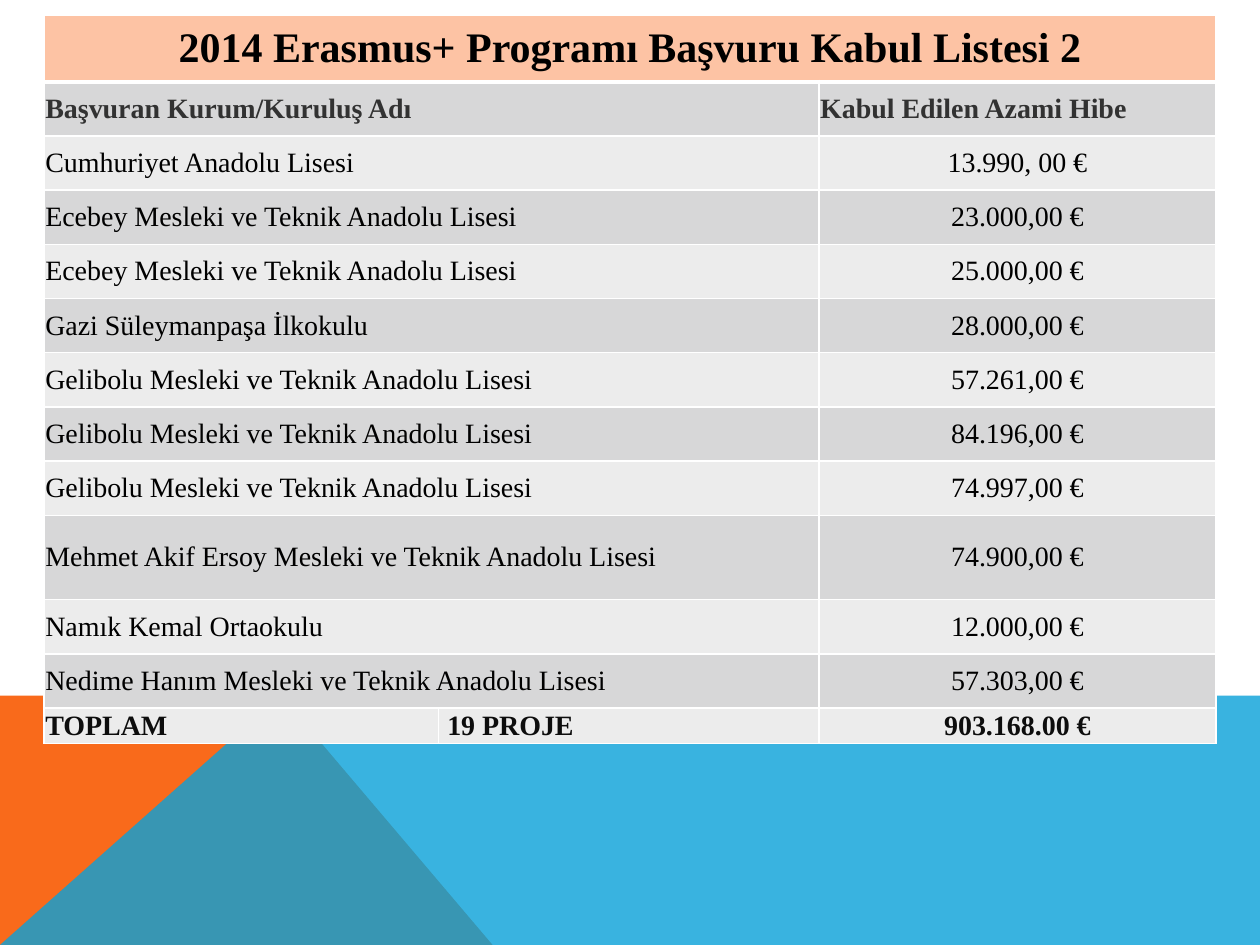
"""Build the grant acceptance list slide."""
from dataclasses import dataclass

from lxml import etree
from pptx import Presentation
from pptx.dml.color import RGBColor
from pptx.enum.text import MSO_ANCHOR, PP_ALIGN
from pptx.oxml.ns import qn
from pptx.util import Inches, Pt

MIDDLE = MSO_ANCHOR.MIDDLE
LEFT, CENTER = PP_ALIGN.LEFT, PP_ALIGN.CENTER

TITLE = "2014 Erasmus+ Programı Başvuru Kabul Listesi 2"
HEADINGS = ("Başvuran Kurum/Kuruluş Adı", "Kabul Edilen Azami Hibe")
GRANTS = (
    ("Cumhuriyet Anadolu Lisesi", "13.990, 00 €"),
    ("Ecebey Mesleki ve Teknik Anadolu Lisesi", "23.000,00 €"),
    ("Ecebey Mesleki ve Teknik Anadolu Lisesi", "25.000,00 €"),
    ("Gazi Süleymanpaşa İlkokulu", "28.000,00 €"),
    ("Gelibolu Mesleki ve Teknik Anadolu Lisesi", "57.261,00 €"),
    ("Gelibolu Mesleki ve Teknik Anadolu Lisesi", "84.196,00 €"),
    ("Gelibolu Mesleki ve Teknik Anadolu Lisesi", "74.997,00 €"),
    ("Mehmet Akif Ersoy Mesleki ve Teknik Anadolu Lisesi", "74.900,00 €"),
    ("Namık Kemal Ortaokulu", "12.000,00 €"),
    ("Nedime Hanım Mesleki ve Teknik Anadolu Lisesi", "57.303,00 €"),
)
TOTALS = ("TOPLAM", "19 PROJE", "903.168.00 €")

COLUMN_WIDTHS = (3.13, 3.02, 3.15)
ROW_HEIGHTS = (0.53, *[0.43] * 8, 0.67, *[0.43] * 2, 0.28)


@dataclass(frozen=True)
class Theme:
    """Colours, font and type sizes."""
    font: str = "Times New Roman"
    title_size: int = 24
    body_size: int = 16
    text: str = "000000"
    heading: str = "323232"
    total: str = "0D0D0D"
    title_fill: str = "FDC3A4"
    bands: tuple = ("ECECEC", "D7D7D8")
    border: str = "FFFFFF"
    orange: str = "F96A1B"
    blue: str = "08A1D9"


class SlideBuilder:
    """Draws styled elements on one slide."""

    def __init__(self, s, theme):
        self.s = s
        self.theme = theme

    def polygon(self, points, color, opacity=100):
        """Draw a closed, borderless outline through points in inches."""
        corners = [(Inches(x), Inches(y)) for x, y in points]
        builder = self.s.shapes.build_freeform(*corners[0])
        builder.add_line_segments(corners[1:], close=True)
        sp = builder.convert_to_shape()
        sp.shadow.inherit = False
        sp.line.fill.background()
        sp.fill.solid()
        sp.fill.fore_color.rgb = RGBColor.from_string(color)
        if opacity < 100:
            clr = sp.fill._xPr.find(".//" + qn("a:srgbClr"))
            etree.SubElement(clr, qn("a:alpha"), val=str(opacity * 1000))

    def table(self, left, top, widths, heights):
        """Add a plain table with the given column widths and row heights."""
        frame = self.s.shapes.add_table(
            len(heights), len(widths), Inches(left), Inches(top),
            Inches(sum(widths)), Inches(sum(heights)))
        table = frame.table
        table.first_row = table.horz_banding = False
        for column, width in zip(table.columns, widths):
            column.width = Inches(width)
        for row, height in zip(table.rows, heights):
            row.height = Inches(height)
        return table

    def borders(self, cell, bottom=1):
        """Give a cell solid borders of one point, with its own bottom width."""
        tc_pr = cell._tc.get_or_add_tcPr()
        for i, (side, width) in enumerate(zip("LRTB", (1, 1, 1, bottom))):
            ln = etree.Element(qn(f"a:ln{side}"), w=str(Pt(width)))
            fill = etree.SubElement(ln, qn("a:solidFill"))
            etree.SubElement(fill, qn("a:srgbClr"), val=self.theme.border)
            tc_pr.insert(i, ln)

    def cell(self, cell, text, fill, color, size=None, bold=False,
             align=LEFT, indent=0.01):
        """Fill a cell and write its text."""
        cell.fill.solid()
        cell.fill.fore_color.rgb = RGBColor.from_string(fill)
        cell.vertical_anchor = MIDDLE
        cell.margin_left = Inches(indent)
        cell.margin_right = cell.margin_top = cell.margin_bottom = Inches(0.01)
        p = cell.text_frame.paragraphs[0]
        p.text = text
        p.alignment = align
        font = p.runs[0].font
        font.name = self.theme.font
        font.size = Pt(size or self.theme.body_size)
        font.bold = bold
        font.color.rgb = RGBColor.from_string(color)

    def grant_table(self):
        """Draw the title, heading, grant and total rows."""
        theme = self.theme
        table = self.table(0.35, 0.12, COLUMN_WIDTHS, ROW_HEIGHTS)
        last = len(ROW_HEIGHTS) - 1
        for row in range(last + 1):
            for column in range(len(COLUMN_WIDTHS)):
                self.borders(table.cell(row, column), 1 if row else 3)

        table.cell(0, 0).merge(table.cell(0, 2))
        self.cell(table.cell(0, 0), TITLE, theme.title_fill, theme.text,
                  theme.title_size, True, CENTER)

        for row, (name, amount) in enumerate((HEADINGS, *GRANTS), start=1):
            heading = row == 1
            color = theme.heading if heading else theme.text
            fill = theme.bands[row % 2]
            table.cell(row, 0).merge(table.cell(row, 1))
            self.cell(table.cell(row, 0), name, fill, color, bold=heading)
            self.cell(table.cell(row, 2), amount, fill, color, bold=heading,
                      align=LEFT if heading else CENTER)

        styles = ((LEFT, 0.01), (LEFT, 0.07), (CENTER, 0.01))
        for column, (text, (align, indent)) in enumerate(zip(TOTALS, styles)):
            self.cell(table.cell(last, column), text, theme.bands[last % 2],
                      theme.total, bold=True, align=align, indent=indent)


def main():
    """Create and save the presentation."""
    prs = Presentation()
    prs.slide_width, prs.slide_height = Inches(10), Inches(7.5)
    theme = Theme()
    slide = SlideBuilder(prs.slides.add_slide(prs.slide_layouts[6]), theme)
    slide.polygon([(0, 7.5), (0, 5.52), (2.23, 5.52), (3.91, 7.5)],
                  theme.orange)
    slide.polygon([(0, 7.5), (2.23, 5.52), (10, 5.52), (10, 7.5)],
                  theme.blue, 80)
    slide.grant_table()
    prs.save("out.pptx")


if __name__ == "__main__":
    main()
